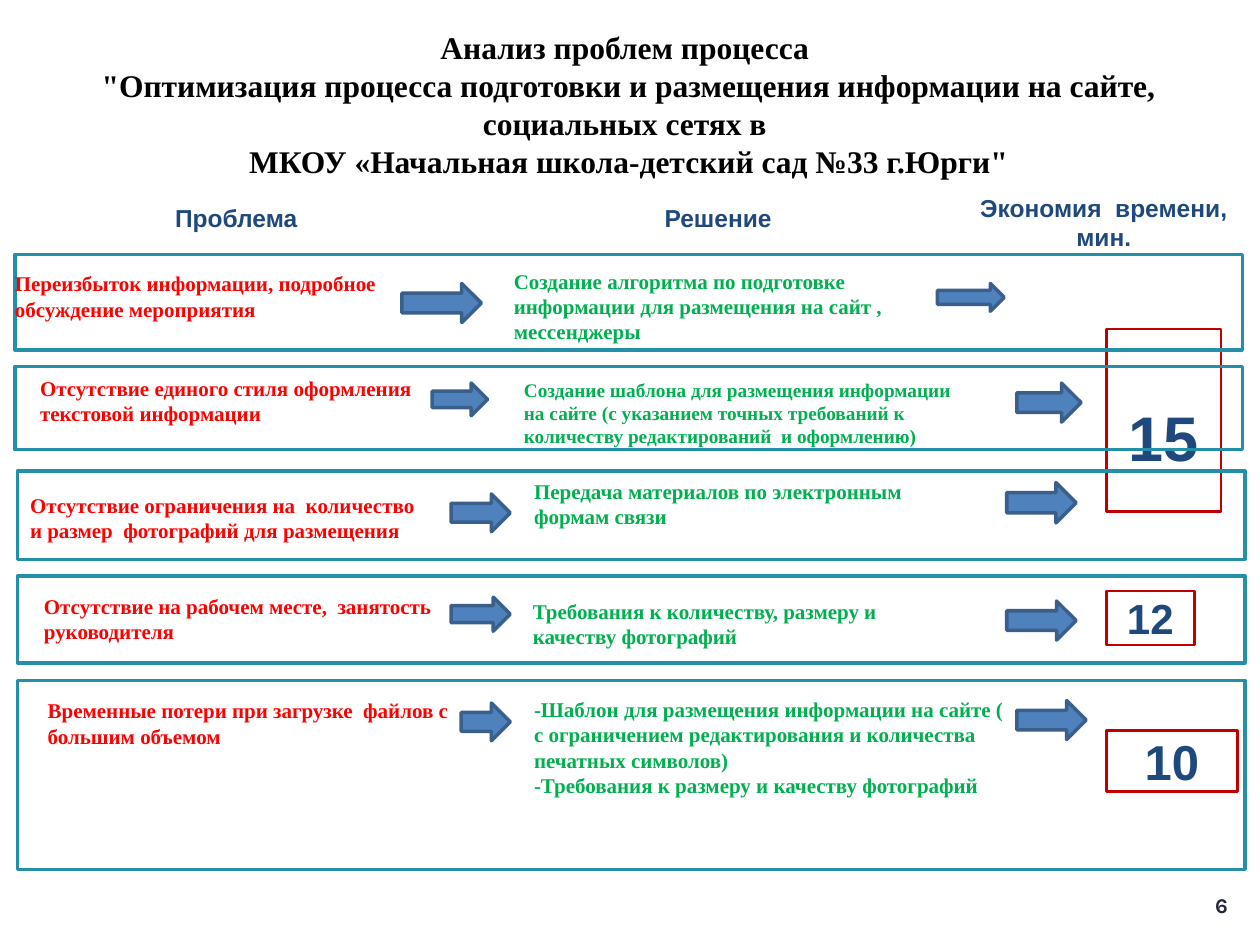
from dataclasses import dataclass

from pptx import Presentation
from pptx import util as u
from pptx.dml.color import RGBColor
from pptx.enum import shapes, text


@dataclass(frozen=True)
class Theme:
    serif: str = "Times New Roman"
    sans: str = "Arial"
    number_font: str = "Karla"
    black: str = "000000"
    navy: str = "1F497D"
    problem: str = "FF0000"
    solution: str = "00B050"
    frame: str = "248FA8"
    badge: str = "C00000"
    arrow: str = "4F81BD"
    arrow_edge: str = "3A5F8C"
    page: str = "23263C"
    title_size: int = 18
    header_size: int = 14
    body_size: int = 12
    small_size: int = 11


THEME = Theme()
COLUMNS = 100
WIDTH, HEIGHT = u.Inches(10), u.Inches(7.5)
CELL = WIDTH / COLUMNS
LINE_CELLS = 2

TITLE = (
    "Анализ проблем процесса \v"
    "\"Оптимизация процесса подготовки и размещения информации на сайте, "
    "социальных сетях в \v"
    "МКОУ «Начальная школа-детский сад №33 г.Юрги\""
)
TITLE_BOX = (2.4, 3.6, 95, 9.3)
HEADERS = [
    ("Проблема", (9.6, 15.6, 18.3, 3)),
    ("Решение", (48.3, 15.6, 17.4, 3)),
    ("Экономия  времени, мин.", (75.2, 14.8, 24.8, 5.3)),
]
SAVINGS = [
    ("15", 36, (87.8, 26.1, 9.1, 14.5), 2.5),
    ("12", 24, (87.8, 46.9, 7, 4.3), 0),
    ("10", 28, (87.8, 58, 10.4, 4.8), 0),
]
ROWS = [
    {
        "frame": (1.2, 20.2, 97.4, 7.6),
        "problem": ("Переизбыток информации, подробное\nобсуждение мероприятия",
                    0.2, 21.5, 40, 2),
        "solution": ("Создание алгоритма по подготовке информации для "
                     "размещения на сайт , мессенджеры", 39.8, 21.3, 34, 3),
        "arrows": [(31.9, 22.5, 6.3, 3.1), (74.4, 22.5, 5.3, 2.2)],
    },
    {
        "frame": (1.2, 29.1, 97.4, 6.6),
        "problem": ("Отсутствие единого стиля оформления текстовой информации",
                    2.2, 29.8, 34.7, 2),
        "solution": ("Создание шаблона для размещения информации на сайте "
                     "(с указанием точных требований к количеству "
                     "редактирований  и оформлению)", 40.6, 30, 37, 3),
        "solution_size": THEME.small_size,
        "arrows": [(34.3, 30.4, 4.4, 2.6), (80.7, 30.4, 5.1, 3.1)],
    },
    {
        "frame": (1.4, 37.4, 97.4, 7),
        "problem": ("Отсутствие ограничения на  количество \v"
                    "и размер  фотографий для размещения", 1.4, 39.1, 38, 2),
        "solution": ("Передача материалов по электронным формам связи",
                     41.4, 38, 32.8, 2),
        "arrows": [(35.8, 39.2, 4.7, 3), (79.9, 38.3, 5.5, 3.2)],
    },
    {
        "frame": (1.4, 45.7, 97.4, 6.9),
        "problem": ("Отсутствие на рабочем месте,  занятость руководителя",
                    2.5, 47.1, 35.9, 2),
        "solution": ("Требования к количеству, размеру и качеству фотографий",
                     41.3, 47.5, 32.8, 2),
        "arrows": [(35.8, 47.4, 4.7, 2.7), (79.9, 47.7, 5.5, 3.1)],
    },
    {
        "frame": (1.4, 54, 97.4, 15),
        "problem": ("Временные потери при загрузке  файлов с большим объемом",
                    2.8, 55.4, 35.9, 2),
        "solution": ("-Шаблон для размещения информации на сайте ( с ограничением "
                     "редактирования и количества печатных символов)\n"
                     "-Требования к размеру и качеству фотографий",
                     41.4, 55.3, 39.3, 4),
        "arrows": [(36.6, 55.8, 3.9, 3), (80.7, 55.6, 5.5, 3.1)],
    },
]
PAGE_NUMBER = ("6", (94.5, 70.3, 4.9, 3.1))


def cells(box):
    return [round(value * CELL) for value in box]


def write(shape, content, font, size, color, align, anchor, top_inset=0):
    frame = shape.text_frame
    frame.text = content
    frame.word_wrap = True
    frame.auto_size = text.MSO_AUTO_SIZE.NONE
    frame.vertical_anchor = anchor
    frame.margin_left = frame.margin_right = round(CELL)
    frame.margin_top, frame.margin_bottom = round(top_inset * CELL), 0
    for paragraph in frame.paragraphs:
        paragraph.alignment = align
        for run in paragraph.runs:
            run.font.name = font
            run.font.size = u.Pt(size)
            run.font.bold = True
            run.font.color.rgb = RGBColor.from_string(color)


def add_text(slide, content, box, *style):
    write(slide.shapes.add_textbox(*cells(box)), content, *style)


def add_outline(slide, kind, box, line, line_width, fill=None):
    shape = slide.shapes.add_shape(kind, *cells(box))
    shape.shadow.inherit = False
    if fill:
        shape.fill.solid()
        shape.fill.fore_color.rgb = RGBColor.from_string(fill)
    else:
        shape.fill.background()
    shape.line.color.rgb = RGBColor.from_string(line)
    shape.line.width = u.Pt(line_width)
    return shape


def add_row(slide, row):
    add_outline(slide, shapes.MSO_SHAPE.RECTANGLE, row["frame"], THEME.frame, 2)
    for arrow in row["arrows"]:
        add_outline(slide, shapes.MSO_SHAPE.RIGHT_ARROW, arrow,
                    THEME.arrow_edge, 2, THEME.arrow)
    sizes = {"problem": THEME.body_size,
             "solution": row.get("solution_size", THEME.body_size)}
    for part, size in sizes.items():
        content, left, top, width, lines = row[part]
        add_text(slide, content, (left, top, width, lines * LINE_CELLS),
                 THEME.serif, size, getattr(THEME, part),
                 text.PP_ALIGN.LEFT, text.MSO_ANCHOR.TOP)


def main():
    presentation = Presentation()
    presentation.slide_width, presentation.slide_height = WIDTH, HEIGHT
    slide = presentation.slides.add_slide(presentation.slide_layouts[5])
    center, middle = text.PP_ALIGN.CENTER, text.MSO_ANCHOR.MIDDLE

    title = slide.shapes.title
    title.left, title.top, title.width, title.height = cells(TITLE_BOX)
    write(title, TITLE, THEME.serif, THEME.title_size, THEME.black, center, middle)

    for content, box in HEADERS:
        add_text(slide, content, box, THEME.sans, THEME.header_size,
                 THEME.navy, center, text.MSO_ANCHOR.TOP, 0.5)
    for content, size, box, top_inset in SAVINGS:
        badge = add_outline(slide, shapes.MSO_SHAPE.RECTANGLE, box, THEME.badge, 1.5)
        write(badge, content, THEME.sans, size, THEME.navy, center, middle, top_inset)
    for row in ROWS:
        add_row(slide, row)
    add_text(slide, *PAGE_NUMBER, THEME.number_font, THEME.body_size,
             THEME.page, center, middle)
    presentation.save("out.pptx")


if __name__ == "__main__":
    main()
